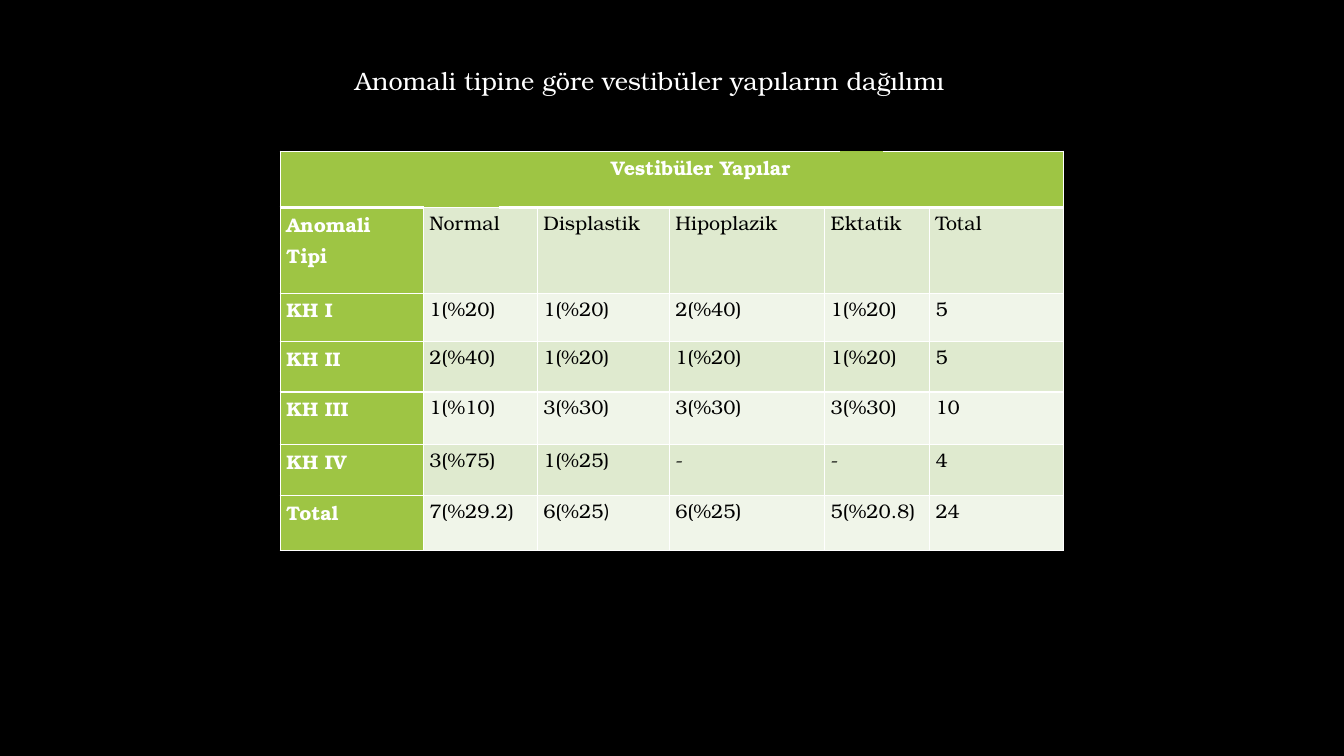
from pptx import Presentation
from pptx.dml.color import RGBColor
from pptx.enum.text import PP_ALIGN
from pptx.oxml.ns import qn
from pptx.util import Inches, Pt
from lxml.etree import SubElement

TITLE = "Anomali tipine göre vestibüler yapıların dağılımı"
HEAD = "Vestibüler Yapılar"
ROWS = [
    ["Anomali Tipi", "Normal ", "Displastik ", "Hipoplazik", "Ektatik", "Total "],
    ["KH I", "1(%20)", "1(%20)", "2(%40)", "1(%20)", "5"],
    ["KH II", "2(%40)", "1(%20)", "1(%20)", "1(%20)", "5"],
    ["KH III", "1(%10)", "3(%30)", "3(%30)", "3(%30)", "10"],
    ["KH IV", "3(%75)", "1(%25)", "-", "-", "4"],
    ["Total ", "7(%29.2)", ("6(%25", ")"), "6(%25)", "5(%20.8)", "24"],
]
WIDTHS = [1.42, 0.75, 0.38, 1.31, 1.54, 0.15, 0.43, 0.46, 1.33]
HEIGHTS = [0.56, 0.85, 0.48, 0.5, 0.52, 0.51, 0.54]
SPANS = [(0, 0), (1, 2), (3, 3), (4, 4), (5, 7), (8, 8)]
HEAD_SPAN = (2, 5)
FONTS = ("TeX Gyre Bonum", "Calibri")

BLACK = RGBColor(0x00, 0x00, 0x00)
WHITE = RGBColor(0xFF, 0xFF, 0xFF)
GREEN = RGBColor(0x9E, 0xC5, 0x44)
BANDS = (RGBColor(0xF0, 0xF5, 0xE9), RGBColor(0xDF, 0xEA, 0xCF))


def add_run(para, text, size, color, bold=False, font=FONTS[0]):
    run = para.add_run()
    run.text = text
    run.font.size = Pt(size)
    run.font.name = font
    run.font.bold = bold
    run.font.color.rgb = color


def add_edges(cell, edges):
    props = cell._tc.get_or_add_tcPr()
    for side in "LRTB":
        width = edges.get(side, 0)
        line = SubElement(props, qn("a:ln" + side), w=str(Pt(width)))
        if width:
            fill = SubElement(line, qn("a:solidFill"))
            SubElement(fill, qn("a:srgbClr"), val=str(WHITE))
        else:
            SubElement(line, qn("a:noFill"))


def head_edges(col):
    edges = {"B": 1 if col == 1 else 3}
    if col != 6:
        edges["T"] = 1
    if col == 0:
        edges["L"] = 1
    if col == len(WIDTHS) - 1:
        edges["R"] = 1
    return edges


def write_cell(cell, parts, color, bold, left=0.06):
    cell.margin_left = Inches(left)
    para = cell.text_frame.paragraphs[0]
    para.alignment = PP_ALIGN.JUSTIFY
    para.line_spacing = 1.07
    for part, font in zip(parts, FONTS):
        add_run(para, part, 14, color, bold, font)


def add_grid(slide):
    frame = slide.shapes.add_table(
        len(HEIGHTS), len(WIDTHS), Inches(2.78), Inches(1.5),
        Inches(sum(WIDTHS)), Inches(sum(HEIGHTS)))
    table = frame.table
    for col, width in zip(table.columns, WIDTHS):
        col.width = Inches(width)
    for row, height in zip(table.rows, HEIGHTS):
        row.height = Inches(height)
    for r in range(len(HEIGHTS)):
        for c in range(len(WIDTHS)):
            cell = table.cell(r, c)
            cell.margin_left = cell.margin_right = Inches(0.06)
            cell.margin_top = cell.margin_bottom = 0
            add_edges(cell, dict.fromkeys("LRTB", 1) if r else head_edges(c))
            cell.fill.solid()
            cell.fill.fore_color.rgb = BANDS[r % 2] if r and c else GREEN

    first, last = HEAD_SPAN
    table.cell(0, first).merge(table.cell(0, last))
    write_cell(table.cell(0, first), [HEAD], WHITE, True, 1.11)
    for r, row in enumerate(ROWS, 1):
        for (first, last), text in zip(SPANS, row):
            cell = table.cell(r, first)
            if last > first:
                cell.merge(table.cell(r, last))
            parts = [text] if isinstance(text, str) else text
            write_cell(cell, parts, BLACK if first else WHITE, first == 0)


def add_title(slide):
    box = slide.shapes.add_textbox(
        Inches(2.42), Inches(0.35), Inches(8.47), Inches(1.01))
    frame = box.text_frame
    frame.word_wrap = True
    frame.margin_left = Inches(1.1)
    frame.margin_top = Inches(0.3)
    add_run(frame.paragraphs[0], TITLE, 18, WHITE)


def main():
    deck = Presentation()
    deck.slide_width = Inches(13.33)
    deck.slide_height = Inches(7.5)
    slide = deck.slides.add_slide(deck.slide_layouts[6])
    slide.background.fill.solid()
    slide.background.fill.fore_color.rgb = BLACK
    add_grid(slide)
    add_title(slide)
    deck.save("out.pptx")


if __name__ == "__main__":
    main()
